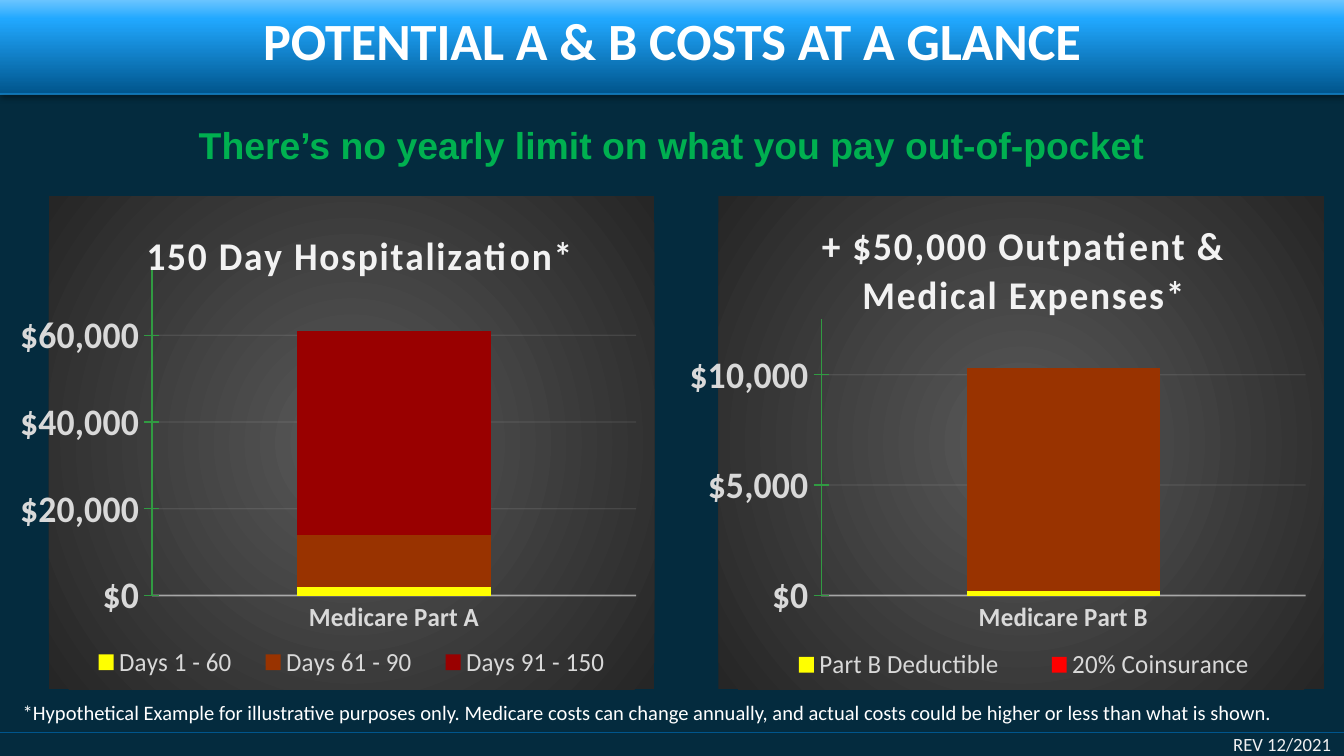
from lxml import etree
from pptx import Presentation
from pptx.chart.data import CategoryChartData
from pptx.dml.color import RGBColor
from pptx.enum import chart as ch, shapes as sh, text as tx
from pptx.oxml import parse_xml
from pptx.oxml.ns import nsdecls, qn
from pptx.util import Inches, Pt

NAVY = RGBColor(0x04, 0x2B, 0x3E)
DEEP = RGBColor(0x00, 0x55, 0x8C)
SKY = RGBColor(0x21, 0xA8, 0xFF)
PALE = RGBColor(0x6B, 0xC5, 0xFF)
WHITE = RGBColor(0xFF, 0xFF, 0xFF)
MIST = RGBColor(0xF2, 0xF2, 0xF2)
SMOKE = RGBColor(0xF0, 0xF0, 0xF0)
GREY = RGBColor(0xD9, 0xD9, 0xD9)
STEEL = RGBColor(0x59, 0x59, 0x59)
COAL = RGBColor(0x26, 0x26, 0x26)
GREEN = RGBColor(0x00, 0xB0, 0x50)
LEAF = RGBColor(0x31, 0x9B, 0x42)
YELLOW = RGBColor(0xFF, 0xFF, 0x00)
RUST = RGBColor(0x99, 0x33, 0x00)
WINE = RGBColor(0x99, 0x00, 0x00)
RED = RGBColor(0xFF, 0x00, 0x00)


def style(font, size, color, bold=False, name="Calibri"):
    font.size, font.bold, font.name = Pt(size), bold, name
    font.color.rgb = color


def fade(line, pct):
    """Make a solid line partly transparent."""
    rgb = line._get_or_add_ln().find(".//" + qn("a:srgbClr"))
    etree.SubElement(rgb, qn("a:alpha"), val=str(pct * 1000))


def stroke(line, color, width, pct=100):
    line.color.rgb, line.width = color, Pt(width)
    if pct < 100:
        fade(line, pct)


def blend(stops, path):
    """Return a gradient fill with the given stops and direction."""
    marks = "".join(
        f'<a:gs pos="{pos * 1000}"><a:srgbClr val="{color}"/></a:gs>'
        for pos, color in stops)
    return parse_xml(f'<a:gradFill {nsdecls("a")} rotWithShape="1">'
                     f'<a:gsLst>{marks}</a:gsLst>{path}</a:gradFill>')


def add_band(slide):
    band = slide.shapes.add_shape(
        sh.MSO_SHAPE.RECTANGLE, 0, 0, Inches(10), Inches(0.7))
    band.line.fill.background()
    props = band._element.spPr
    props.find(qn("a:ln")).addprevious(blend(
        [(0, PALE), (20, SKY), (100, DEEP)], '<a:lin ang="5400000" scaled="0"/>'))
    props.append(parse_xml(
        f'<a:effectLst {nsdecls("a")}><a:outerShdw blurRad="{Pt(3.1)}" '
        f'dist="{Pt(1.8)}" dir="5400000" rotWithShape="0">'
        '<a:srgbClr val="000000"><a:alpha val="35000"/></a:srgbClr>'
        '</a:outerShdw></a:effectLst>'))


def add_rule(slide, y, color, pct=100):
    rule = slide.shapes.add_connector(
        sh.MSO_CONNECTOR.STRAIGHT, 0, Inches(y), Inches(10), Inches(y))
    stroke(rule.line, color, 0.75, pct)
    etree.SubElement(rule._element.spPr, qn("a:effectLst"))


def write(frame, words, align, anchor, *look):
    frame.word_wrap, frame.vertical_anchor = True, anchor
    para = frame.paragraphs[0]
    para.alignment = align
    run = para.add_run()
    run.text = words
    style(run.font, *look)
    return para


def add_text(slide, box, words, align, anchor, *look):
    frame = slide.shapes.add_textbox(*map(Inches, box)).text_frame
    return frame, write(frame, words, align, anchor, *look)


def set_title(slide, words):
    title = slide.shapes.title
    title.left, title.top = Inches(0.5), Inches(-0.01)
    title.width, title.height = Inches(9), Inches(0.7)
    para = write(title.text_frame, words, tx.PP_ALIGN.CENTER,
                 tx.MSO_ANCHOR.MIDDLE, 28, WHITE, True)
    para.line_spacing = 0.8
    # Bring the title in front of the band
    title._element.getparent().append(title._element)


def place(part, box, prior=None, inner=False):
    """Fix a chart part by shares of the chart, after the prior child."""
    old = part.find(qn("c:layout"))
    if old is not None:
        part.remove(old)
    target = '<c:layoutTarget val="inner"/>' if inner else ""
    sizes = "".join(f'<c:{tag} val="{val}"/>' for tag, val in zip("xywh", box))
    layout = parse_xml(
        f'<c:layout {nsdecls("c")}><c:manualLayout>{target}<c:xMode val="edge"/>'
        f'<c:yMode val="edge"/>{sizes}</c:manualLayout></c:layout>')
    if prior is None:
        part.insert(0, layout)
    else:
        part.find(qn(prior)).addnext(layout)


def add_costs(slide, x, head, part, parts, top, step, spot, area, key):
    data = CategoryChartData(number_format='"$"#,##0')
    data.categories = [part]
    for name, cost, _ in parts:
        data.add_series(name, [cost])
    chart = slide.shapes.add_chart(
        ch.XL_CHART_TYPE.COLUMN_STACKED, Inches(x), Inches(1.46),
        Inches(4.72), Inches(3.67), data).chart
    chart.font.size, chart.font.name = Pt(10), "Calibri"

    # Heading
    run = chart.chart_title.text_frame.paragraphs[0].add_run()
    run.text = head
    style(run.font, 21, MIST, True)
    run.font._element.set("spc", "100")
    chart.chart_title.include_in_layout = False
    place(chart.chart_title._element, spot, "c:tx")

    # Columns
    plot = chart.plots[0]
    plot.gap_width, plot.overlap, plot.vary_by_categories = 150, 100, False
    for series, (_, _, color) in zip(plot.series, parts):
        series.format.fill.solid()
        series.format.fill.fore_color.rgb = color

    # Axes
    cat, val = chart.category_axis, chart.value_axis
    cat.major_tick_mark = ch.XL_TICK_MARK.NONE
    style(cat.tick_labels.font, 14, GREY, True)
    stroke(cat.format.line, MIST, 1, 54)
    val.minimum_scale, val.maximum_scale, val.major_unit = 0, top, step
    val.major_tick_mark = ch.XL_TICK_MARK.CROSS
    val.tick_labels.number_format = '"$"#,##0'
    val.tick_labels.number_format_is_linked = False
    style(val.tick_labels.font, 20, GREY, True)
    stroke(val.format.line, LEAF, 0.75)
    stroke(val.major_gridlines.format.line, MIST, 0.75, 10)

    # Legend
    chart.has_legend = True
    chart.legend.position = ch.XL_LEGEND_POSITION.BOTTOM
    chart.legend.include_in_layout = False
    style(chart.legend.font, 14, GREY)
    place(chart.legend._element, key, "c:legendPos")

    # Plot area and backdrop
    place(chart._chartSpace.chart.plotArea, area, inner=True)
    props = parse_xml(f'<c:spPr {nsdecls("c", "a")}><a:ln><a:noFill/></a:ln></c:spPr>')
    props.insert(0, blend(
        [(0, STEEL), (100, COAL)],
        '<a:path path="circle"><a:fillToRect l="50000" t="50000" '
        'r="50000" b="50000"/></a:path>'))
    chart._chartSpace.chart.addnext(props)
    return chart


def main():
    deck = Presentation()
    deck.slide_width, deck.slide_height = Inches(10), Inches(10 * 9 / 16)
    slide = deck.slides.add_slide(deck.slide_layouts[5])
    slide.background.fill.solid()
    slide.background.fill.fore_color.rgb = NAVY

    # Header and footer
    add_band(slide)
    add_rule(slide, 0.7, SKY, 60)
    add_rule(slide, 5.45, DEEP)
    frame, _ = add_text(slide, (8.88, 5.45, 1.12, 0.17), "REV 12/2021",
                        tx.PP_ALIGN.RIGHT, tx.MSO_ANCHOR.MIDDLE, 10, SMOKE)
    frame.margin_top = frame.margin_bottom = 0
    set_title(slide, "POTENTIAL A & B COSTS AT A GLANCE")

    # Cost charts
    add_costs(slide, 0.15, "150 Day Hospitalization*", "Medicare Part A",
              [("Days 1 - 60", 2000, YELLOW), ("Days 61 - 90", 12000, RUST),
               ("Days 91 - 150", 47000, WINE)], 75000, 20000,
              (0.15, 0.05), (0.17, 0.15, 0.8, 0.66), (0.04, 0.9, 0.92, 0.09))
    chart = add_costs(
        slide, 5.13, "+ $50,000 Outpatient & Medical Expenses*", "Medicare Part B",
        [("Part B Deductible", 200, YELLOW), ("20% Coinsurance", 10100, RED)],
        12500, 5000, (0.16, 0.03), (0.17, 0.25, 0.8, 0.56), (0.06, 0.91, 0.89, 0.08))
    fill = chart.plots[0].series[1].points[0].format.fill
    fill.solid()
    fill.fore_color.rgb = RUST

    # Footnote and key message
    _, note = add_text(
        slide, (0.07, 5.21, 9.78, 0.23),
        "*Hypothetical Example for illustrative purposes only. Medicare costs can "
        "change annually, and actual costs could be higher or less than what is shown.",
        tx.PP_ALIGN.LEFT, tx.MSO_ANCHOR.BOTTOM, 11, WHITE)
    note.line_spacing = Pt(8)
    add_text(slide, (0.15, 0.86, 9.7, 0.44),
             "There’s no yearly limit on what you pay out-of-pocket",
             tx.PP_ALIGN.CENTER, tx.MSO_ANCHOR.TOP, 20, GREEN, True, "Arial")
    deck.save("out.pptx")


if __name__ == "__main__":
    main()
